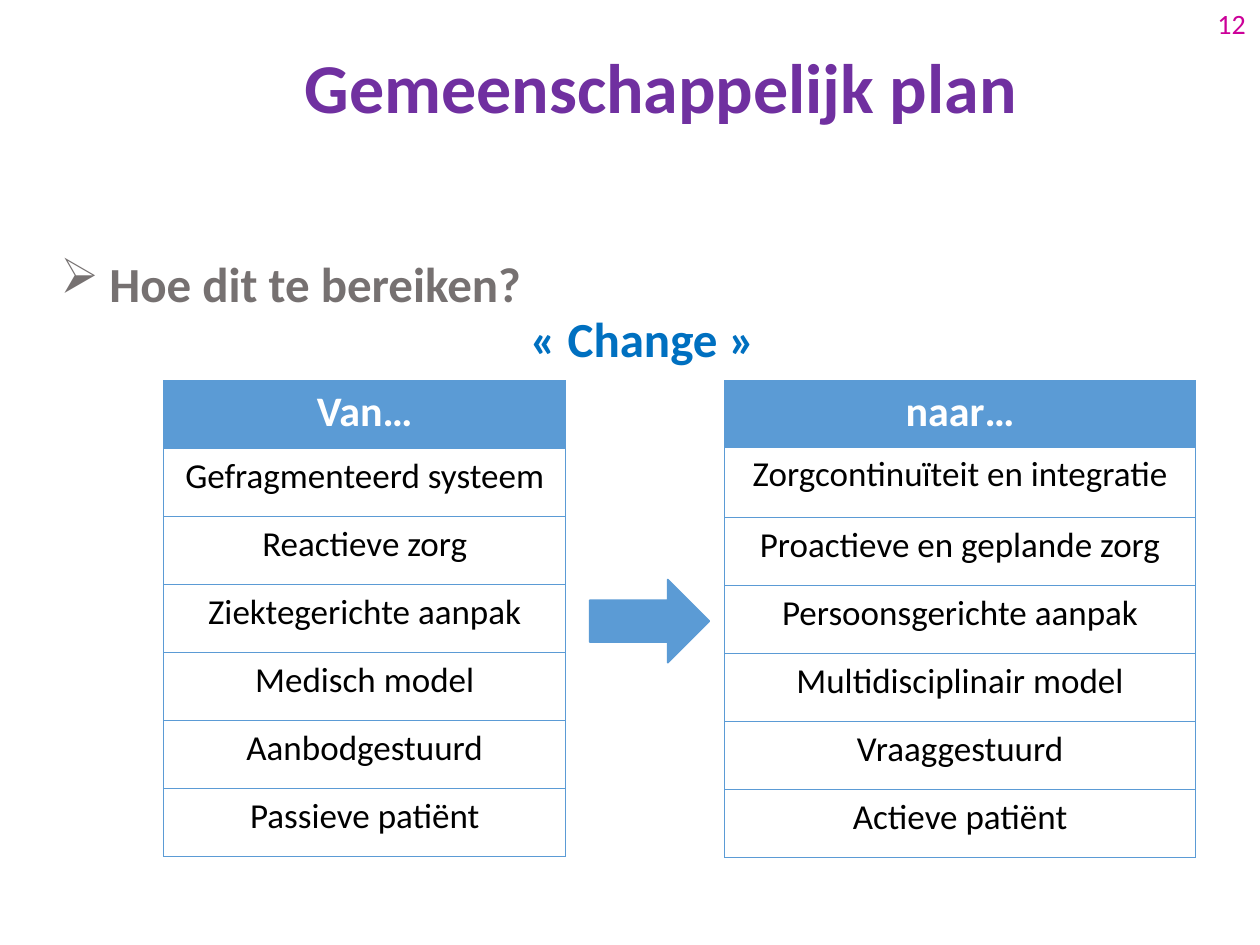
from lxml.etree import SubElement
from pptx import Presentation
from pptx.dml.color import RGBColor
from pptx.enum.shapes import MSO_SHAPE as Shape
from pptx.enum.text import MSO_ANCHOR as Anchor, PP_ALIGN as Align
from pptx.oxml.ns import qn
from pptx.util import Inches, Pt

FONT = "Calibri"
COLORS = {
    "title": "7030A0", "question": "767171", "change": "0070C0",
    "number": "CC0099", "blue": "5B9BD5", "white": "FFFFFF", "black": "000000",
}
TABLE_TOP = 3.02
ROW = 0.54
FROM_ROWS = ["Van…", "Gefragmenteerd systeem", "Reactieve zorg",
             "Ziektegerichte aanpak", "Medisch model", "Aanbodgestuurd",
             "Passieve patiënt"]
TO_ROWS = ["naar…", "Zorgcontinuïteit en integratie",
           "Proactieve en geplande zorg", "Persoonsgerichte aanpak",
           "Multidisciplinair model", "Vraaggestuurd", "Actieve patiënt"]


def color(name):
    return RGBColor.from_string(COLORS[name])


def write(frame, text, size, ink, bold=False, align=Align.LEFT,
          spacing=None, bullet=None, indent=0):
    """Put one formatted paragraph in a text frame."""
    paragraph = frame.paragraphs[0]
    paragraph.text = text
    paragraph.alignment = align
    if spacing:
        paragraph.line_spacing = spacing
    if bullet:
        properties = paragraph._p.get_or_add_pPr()
        properties.set("marL", str(Inches(indent)))
        properties.set("indent", str(-Inches(indent)))
        SubElement(properties, qn("a:buChar"), char=bullet)
    font = paragraph.font
    font.name, font.size, font.bold = FONT, Pt(size), bold
    font.color.rgb = color(ink)


def add_text(slide, box, text, **style):
    shape = slide.shapes.add_textbox(*map(Inches, box))
    shape.text_frame.word_wrap = True
    write(shape.text_frame, text, **style)


def add_borders(cell, ink, width):
    properties = cell._tc.get_or_add_tcPr()
    for position, side in enumerate(("a:lnL", "a:lnR", "a:lnT", "a:lnB")):
        line = properties.makeelement(qn(side), {"w": str(Pt(width))})
        fill = SubElement(line, qn("a:solidFill"))
        SubElement(fill, qn("a:srgbClr"), val=COLORS[ink])
        properties.insert(position, line)


def add_list_table(slide, left, width, texts, heights):
    """One column: a blue header above plain rows."""
    frame = slide.shapes.add_table(
        len(texts), 1, Inches(left), Inches(TABLE_TOP),
        Inches(width), Inches(sum(heights)))
    table = frame.table
    for index, (text, height) in enumerate(zip(texts, heights)):
        header = index == 0
        table.rows[index].height = Inches(height)
        cell = table.cell(index, 0)
        cell.margin_left = cell.margin_right = Inches(0.08)
        cell.fill.solid()
        cell.fill.fore_color.rgb = color("blue" if header else "white")
        write(cell.text_frame, text, size=24 if header else 20, bold=header,
              ink="white" if header else "black", align=Align.CENTER)
        add_borders(cell, "blue", 0.5)


def add_arrow(slide, box):
    arrow = slide.shapes.add_shape(Shape.RIGHT_ARROW, *map(Inches, box))
    arrow.shadow.inherit = False
    arrow.fill.solid()
    arrow.fill.fore_color.rgb = color("blue")
    arrow.line.color.rgb = color("blue")
    arrow.line.width = Pt(1)


def set_title(slide, box, text, **style):
    title = slide.shapes.title
    title.left, title.top, title.width, title.height = map(Inches, box)
    title.text_frame.vertical_anchor = Anchor.MIDDLE
    write(title.text_frame, text, **style)


def main():
    presentation = Presentation()
    presentation.slide_width, presentation.slide_height = Inches(10), Inches(7.5)
    slide = presentation.slides.add_slide(presentation.slide_layouts[5])

    # Title and question
    set_title(slide, (1.92, 0, 6.65, 1.44), "Gemeenschappelijk plan", size=40,
              ink="title", bold=True, align=Align.CENTER, spacing=0.9)
    add_text(slide, (0.38, 2.05, 8.79, 0.73), "Hoe dit te bereiken?", size=28,
             ink="question", bold=True, spacing=0.8, bullet="➢", indent=0.39)

    # Change from the left list to the right list
    add_list_table(slide, 1.3, 3.19, FROM_ROWS, [ROW] * 7)
    add_arrow(slide, (4.68, 4.6, 0.95, 0.66))
    add_list_table(slide, 5.75, 3.74, TO_ROWS, [0.53, 0.56] + [ROW] * 5)
    add_text(slide, (4.11, 2.4, 2.19, 0.57), "« Change »", size=28,
             ink="change", bold=True)

    # Page number
    add_text(slide, (9.55, 0, 0.45, 0.4), "12", size=16, ink="number",
             align=Align.CENTER)
    presentation.save("out.pptx")


if __name__ == "__main__":
    main()
